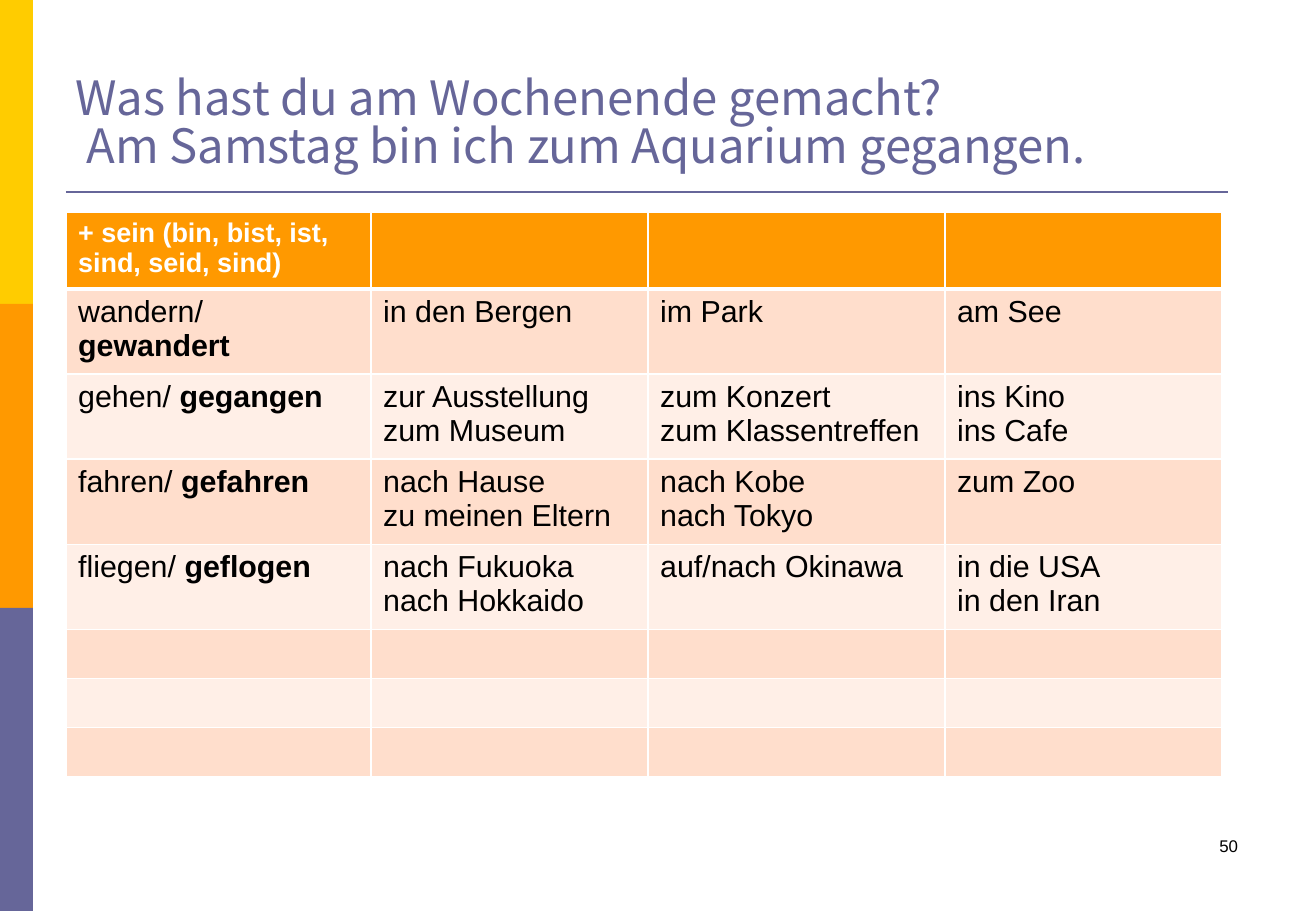
"""Build the slide on the German perfect tense with sein."""
from dataclasses import dataclass

from lxml import etree
from pptx import Presentation
from pptx.dml.color import RGBColor
from pptx.enum.shapes import MSO_CONNECTOR, MSO_SHAPE
from pptx.enum.text import MSO_ANCHOR, PP_ALIGN
from pptx.oxml.ns import qn
from pptx.util import Emu, Pt

RECT = MSO_SHAPE.RECTANGLE
STRAIGHT = MSO_CONNECTOR.STRAIGHT
BOTTOM = MSO_ANCHOR.BOTTOM
LEFT, RIGHT = PP_ALIGN.LEFT, PP_ALIGN.RIGHT
SCALE = 914400 / 121.5


@dataclass(frozen=True)
class Theme:
    yellow: str = "FFCC00"
    orange: str = "FF9900"
    violet: str = "666699"
    band_dark: str = "FFDECC"
    band_light: str = "FFEFE7"
    white: str = "FFFFFF"
    black: str = "000000"
    title_font: str = "Noto Sans CJK JP"
    body_font: str = "Arial"
    title_size: int = 28
    header_size: int = 16
    body_size: int = 18
    number_size: int = 10


def px(*lengths):
    return [Emu(round(n * SCALE)) for n in lengths]


def style(p, name, size, color, bold=False):
    p.font.name, p.font.size, p.font.bold = name, Pt(size), bold
    p.font.color.rgb = RGBColor.from_string(color)


theme = Theme()
prs = Presentation()
prs.slide_width, prs.slide_height = px(1316, 911)
s = prs.slides.add_slide(prs.slide_layouts[6])

for i, color in enumerate((theme.yellow, theme.orange, theme.violet)):
    sp = s.shapes.add_shape(RECT, *px(0, i * 304, 33, 304))
    sp.shadow.inherit = False
    sp.fill.solid()
    sp.fill.fore_color.rgb = RGBColor.from_string(color)
    sp.line.fill.background()

rule = s.shapes.add_connector(STRAIGHT, *px(66, 192, 1228, 192))
rule.line.color.rgb = RGBColor.from_string(theme.violet)
rule.line.width = Pt(1.5)
etree.SubElement(rule._element.spPr, qn("a:effectLst"))

title = "Was hast du am Wochenende gemacht?\n Am Samstag bin ich zum Aquarium gegangen."
texts = [
    (title, (64, 16, 1185, 163), LEFT, theme.title_font, theme.title_size, theme.violet),
    ("50", (943, 830, 307, 61), RIGHT, theme.body_font, theme.number_size, theme.black),
]
for text, box, align, font, size, color in texts:
    tf = s.shapes.add_textbox(*px(*box)).text_frame
    tf.word_wrap = True
    p = tf.paragraphs[0]
    p.text = text.replace("\n", "\v")
    p.alignment = align
    style(p, font, size, color)
    if text == title:
        tf.vertical_anchor = BOTTOM
        p.line_spacing = 0.84

rows = [
    ["+ sein (bin, bist, ist, sind, seid, sind)", "", "", ""],
    ["wandern/ *gewandert", "in den Bergen", "im Park", "am See"],
    ["gehen/ *gegangen", "zur Ausstellung\nzum Museum",
     "zum Konzert\nzum Klassentreffen", "ins Kino\nins Cafe"],
    ["fahren/ *gefahren", "nach Hause\nzu meinen Eltern", "nach Kobe\nnach Tokyo", "zum Zoo"],
    ["fliegen/ *geflogen", "nach Fukuoka\nnach Hokkaido",
     "auf/nach Okinawa", "in die USA\nin den Iran"],
] + [[""] * 4] * 3
widths = px(305, 277, 297, 277)
heights = px(73, *[80] * 4, *[49] * 3)
table = s.shapes.add_table(
    len(rows), len(widths), *px(66, 212), sum(widths), sum(heights)).table
for column, width in zip(table.columns, widths):
    column.width = width

for r, (row, height) in enumerate(zip(rows, heights)):
    table.rows[r].height = height
    header = r == 0
    band = theme.orange if header else theme.band_dark if r % 2 else theme.band_light
    size = theme.header_size if header else theme.body_size
    color = theme.white if header else theme.black
    for c, text in enumerate(row):
        cell = table.cell(r, c)
        cell.text = text.partition("*")[0]
        for p in cell.text_frame.paragraphs:
            style(p, theme.body_font, size, color, header)
        if "*" in text:
            run = p.add_run()
            run.text = text.partition("*")[2]
            run.font.bold = True
        tc_pr = cell._tc.get_or_add_tcPr()
        for side in ("lnL", "lnR", "lnT", "lnB"):
            thick = (header and side == "lnB") or (r == 1 and side == "lnT")
            ln = etree.SubElement(tc_pr, qn(f"a:{side}"), w=str(Pt(3 if thick else 1)))
            fill = etree.SubElement(ln, qn("a:solidFill"))
            etree.SubElement(fill, qn("a:srgbClr"), val=theme.white)
        cell.fill.solid()
        cell.fill.fore_color.rgb = RGBColor.from_string(band)

prs.save("out.pptx")
